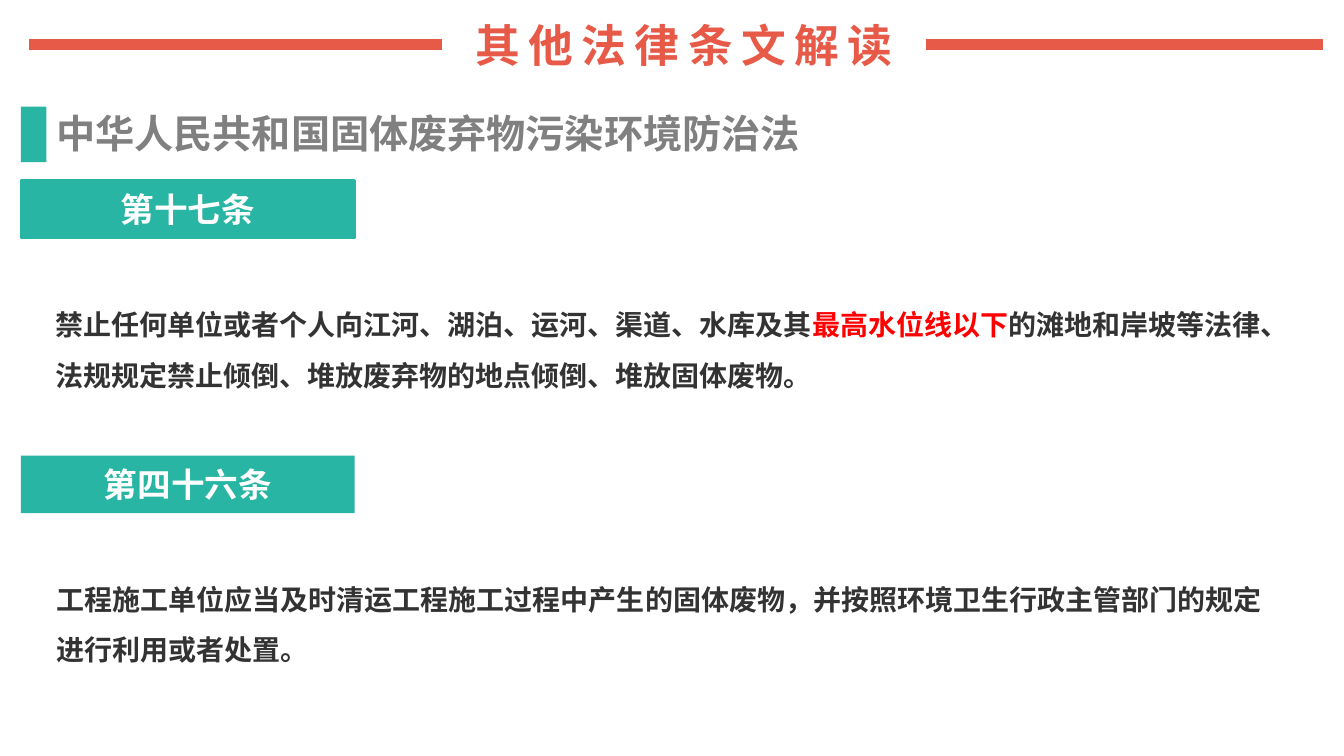
import pptx
import pptx.util
import pptx.dml.color
import pptx.enum.shapes
import pptx.enum.text
import pptx.oxml
import pptx.oxml.ns

Cm, Pt = pptx.util.Cm, pptx.util.Pt
ANCHOR = pptx.enum.text.MSO_ANCHOR
ALIGN = pptx.enum.text.PP_ALIGN

THEME = {
    "font": "Noto Sans CJK SC",
    "red": "E75A48", "teal": "28B5A4", "grey": "808080",
    "ink": "333333", "alert": "FF0000", "white": "FFFFFF",
    "title": 32, "heading": 28, "label": 24, "body": 20,
    "rule": 8.25, "border": 2,
}

TITLE = "其他法律条文解读"
HEADING = "中华人民共和国固体废弃物污染环境防治法"
# label, label top, label border, body box (cm), body runs (text, colour)
ARTICLES = [
    ("第十七条", 4.55, True, (1.14, 7.21, 31.14, 2.67), [
        ("禁止任何单位或者个人向江河、湖泊、运河、渠道、水库及其", "ink"),
        ("最高水位线以下", "alert"),
        ("的滩地和岸坡等法律、法规规定禁止倾倒、堆放废弃物的地点倾倒、堆放固体废物。", "ink"),
    ]),
    ("第四十六条", 11.48, False, (1.17, 14.12, 31.55, 2.67), [
        ("工程施工单位应当及时清运工程施工过程中产生的固体废物，"
         "并按照环境卫生行政主管部门的规定进行利用或者处置。", "ink"),
    ]),
]
RULES = [(0.74, 11.15), (23.34, 33.35)]
RULE_Y = 1.12
LEFT, LABEL_W, LABEL_H = 0.53, 8.41, 1.45


def color(name):
    return pptx.dml.color.RGBColor.from_string(THEME[name])


def write(s, runs, size, anchor=ANCHOR.TOP, align=ALIGN.LEFT, leading=None, spacing=None):
    """Fill a shape with one paragraph of (text, colour) runs."""
    tf = s.text_frame
    tf.word_wrap, tf.vertical_anchor = True, anchor
    p = tf.paragraphs[0]
    p.alignment, p.line_spacing = align, leading
    for text, ink in runs:
        r = p.add_run()
        r.text = text
        for key, value in {"name": THEME["font"], "size": Pt(THEME[size]), "bold": True}.items():
            setattr(r.font, key, value)
        r.font.color.rgb = color(ink)
        rpr = r.font._element
        ea = pptx.oxml.parse_xml(f'<a:ea {pptx.oxml.ns.nsdecls("a")} typeface="{THEME["font"]}"/>')
        rpr.find(pptx.oxml.ns.qn("a:latin")).addnext(ea)
        if spacing:
            rpr.set("spc", str(spacing * 100))


def add_text(shapes, box, runs, size, **layout):
    write(shapes.add_textbox(*map(Cm, box)), runs, size, **layout)


def add_block(shapes, box, border=False):
    s = shapes.add_shape(pptx.enum.shapes.MSO_SHAPE.RECTANGLE, *map(Cm, box))
    s.shadow.inherit = False
    s.fill.solid()
    s.fill.fore_color.rgb = color("teal")
    if border:
        s.line.color.rgb = color("teal")
        s.line.width = Pt(THEME["border"])
    else:
        s.line.fill.background()
    return s


def add_rule(shapes, x1, x2):
    s = shapes.add_connector(pptx.enum.shapes.MSO_CONNECTOR.STRAIGHT,
                             Cm(x1), Cm(RULE_Y), Cm(x2), Cm(RULE_Y))
    s.line.color.rgb = color("red")
    s.line.width = Pt(THEME["rule"])
    s._element.spPr.append(pptx.oxml.parse_xml(f'<a:effectLst {pptx.oxml.ns.nsdecls("a")}/>'))


def main():
    prs = pptx.Presentation()
    prs.slide_width, prs.slide_height = Cm(33.88), Cm(19.05)
    shapes = prs.slides.add_slide(prs.slide_layouts[6]).shapes

    add_text(shapes, (11.73, 0.3, 13.28, 1.63), [(TITLE, "red")], "title",
             anchor=ANCHOR.MIDDLE, spacing=6)
    for x1, x2 in RULES:
        add_rule(shapes, x1, x2)

    add_block(shapes, (LEFT, 2.69, 0.64, 1.4))
    add_text(shapes, (1.17, 2.64, 20.98, 1.45), [(HEADING, "grey")], "heading")

    for label, top, border, body_box, runs in ARTICLES:
        s = add_block(shapes, (LEFT, top, LABEL_W, LABEL_H), border)
        write(s, [(label, "white")], "label", anchor=ANCHOR.MIDDLE, align=ALIGN.CENTER)
        add_text(shapes, body_box, runs, "body", leading=1.5)

    prs.save("out.pptx")


if __name__ == "__main__":
    main()
